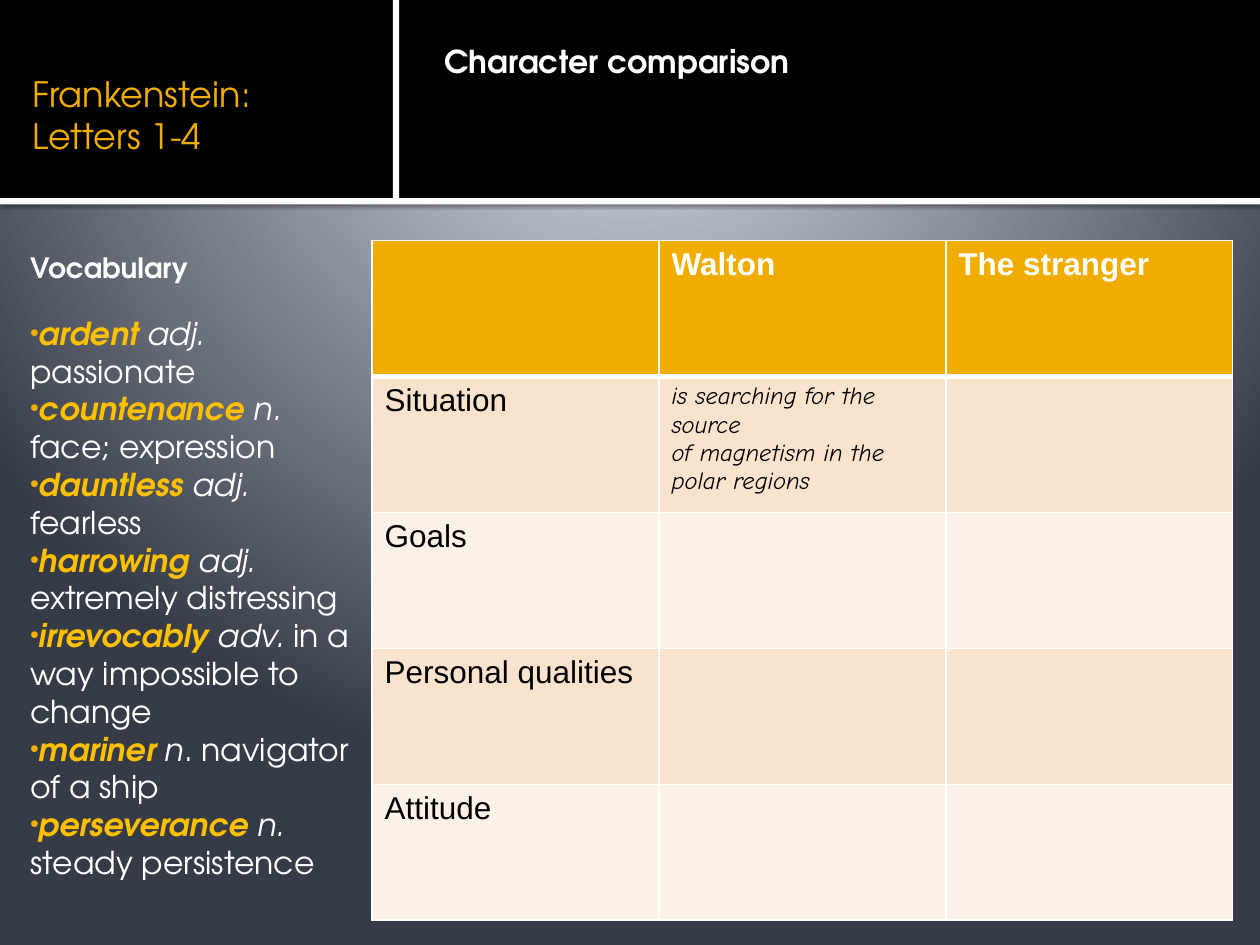
from dataclasses import dataclass

from lxml.etree import SubElement
from pptx import Presentation
from pptx.dml.color import RGBColor as RGB
from pptx.enum.shapes import MSO_SHAPE as Shape
from pptx.enum.text import MSO_ANCHOR as Anchor
from pptx.oxml import parse_xml
from pptx.oxml.ns import nsdecls, qn
from pptx.util import Cm, Pt


@dataclass(frozen=True)
class Theme:
    heading_font: str = "TeX Gyre Adventor"
    table_font: str = "Arial"
    note_font: str = "Comic Neue"
    black: str = "000000"
    white: str = "FFFFFF"
    amber: str = "F0AD00"
    term: str = "FFC000"
    bands: tuple = ("F9E3CC", "FCF1E7")
    backdrop: tuple = ((0, "C1C5D3"), (12, "C1C5D3"), (20, "BFC4D2"), (100, "353B47"))
    title_size: int = 20
    text_size: int = 18
    label_size: int = 16
    note_size: int = 14


VOCABULARY = (
    ("ardent ", "adj. ", "passionate"),
    ("countenance ", "n. ", "face; expression"),
    ("dauntless ", "adj. ", "fearless"),
    ("harrowing ", "adj. ", "extremely distressing"),
    ("irrevocably ", "adv. ", "in a way impossible to change"),
    ("mariner ", "n", ". navigator of a ship"),
    ("perseverance ", "n. ", "steady persistence"),
)
COMPARISON = (
    ("", "Walton", "The stranger"),
    ("Situation", "is searching for the source\nof magnetism in the polar regions", ""),
    ("Goals", "", ""),
    ("Personal qualities", "", ""),
    ("Attitude", "", ""),
)


class SlideBuilder:
    """Draws styled elements on one slide."""

    def __init__(self, slide, theme):
        self.slide = slide
        self.theme = theme

    def background(self):
        self.slide.background.fill.gradient()
        gradient = self.slide.element.find(".//" + qn("a:gradFill"))
        for child in list(gradient):
            gradient.remove(child)
        stops = SubElement(gradient, qn("a:gsLst"))
        for position, color in self.theme.backdrop:
            stop = SubElement(stops, qn("a:gs"), pos=str(position * 1000))
            SubElement(stop, qn("a:srgbClr"), val=color)
        path = SubElement(gradient, qn("a:path"), path="circle")
        SubElement(path, qn("a:fillToRect"), l="10000", t="-25000", r="10000", b="125000")

    def bar(self, left, top, width, height, color, shadow=False):
        shape = self.slide.shapes.add_shape(
            Shape.RECTANGLE, Cm(left), Cm(top), Cm(width), Cm(height))
        shape.fill.solid()
        shape.fill.fore_color.rgb = RGB.from_string(color)
        shape.line.fill.background()
        shape.shadow.inherit = False
        if shadow:
            effects = shape.element.spPr.find(qn("a:effectLst"))
            effects.append(parse_xml(
                f'<a:outerShdw {nsdecls("a")} blurRad="{Pt(2.5)}" dist="{Pt(0.8)}" dir="5400000">'
                f'<a:srgbClr val="{self.theme.black}"><a:alpha val="60000"/></a:srgbClr>'
                '</a:outerShdw>'))

    def font(self, font, name, size, color, bold=False, italic=False):
        font.name, font.size = name, Pt(size)
        font.bold, font.italic = bold, italic
        font.color.rgb = RGB.from_string(color)

    def text_box(self, left, top, width, height, text, size, color, bold=False,
                 margins=(0.25, 0.13, 0.25, 0.13), anchor=Anchor.TOP):
        box = self.slide.shapes.add_textbox(Cm(left), Cm(top), Cm(width), Cm(height))
        frame = box.text_frame
        frame.word_wrap = True
        frame.vertical_anchor = anchor
        (frame.margin_left, frame.margin_top,
         frame.margin_right, frame.margin_bottom) = map(Cm, margins)
        paragraph = frame.paragraphs[0]
        paragraph.text = text
        self.font(paragraph.font, self.theme.heading_font, size, color, bold)
        return frame

    def vocabulary_entry(self, frame, term, word_class, meaning):
        theme = self.theme
        paragraph = frame.add_paragraph()
        properties = paragraph._p.get_or_add_pPr()
        properties.set("marL", "0")
        properties.set("indent", "0")
        bullet_color = SubElement(properties, qn("a:buClr"))
        SubElement(bullet_color, qn("a:srgbClr"), val=theme.amber)
        SubElement(properties, qn("a:buSzPct"), val="80000")
        SubElement(properties, qn("a:buFont"), typeface=theme.table_font)
        SubElement(properties, qn("a:buChar"), char="•")
        for text, color, bold, italic in ((term, theme.term, True, True),
                                          (word_class, theme.white, False, True),
                                          (meaning, theme.white, False, False)):
            run = paragraph.add_run()
            run.text = text
            self.font(run.font, theme.heading_font, theme.text_size, color, bold, italic)

    def borders(self, cell, top, bottom):
        properties = cell._tc.get_or_add_tcPr()
        for side, width in (("L", 1), ("R", 1), ("T", top), ("B", bottom)):
            line = SubElement(properties, qn(f"a:ln{side}"), w=str(Pt(width)))
            fill = SubElement(line, qn("a:solidFill"))
            SubElement(fill, qn("a:srgbClr"), val=self.theme.white)

    def cell(self, cell, text, row, column):
        theme = self.theme
        header = row == 0
        note = row > 0 and column > 0
        self.borders(cell, 3 if row == 1 else 1, 3 if header else 1)
        cell.fill.solid()
        cell.fill.fore_color.rgb = RGB.from_string(
            theme.amber if header else theme.bands[(row - 1) % 2])
        cell.text = text
        for paragraph in cell.text_frame.paragraphs:
            self.font(paragraph.font,
                      theme.note_font if note else theme.table_font,
                      theme.note_size if note else theme.text_size,
                      theme.white if header else theme.black, header, note)

    def table(self, left, top, width, height, rows):
        table = self.slide.shapes.add_table(
            len(rows), len(rows[0]), Cm(left), Cm(top), Cm(width), Cm(height)).table
        for row, texts in enumerate(rows):
            for column, text in enumerate(texts):
                self.cell(table.cell(row, column), text, row, column)


def main():
    theme = Theme()
    presentation = Presentation()
    presentation.slide_width, presentation.slide_height = Cm(25.4), Cm(19.05)
    slide = presentation.slides.add_slide(presentation.slide_layouts[6])
    builder = SlideBuilder(slide, theme)

    builder.background()
    builder.bar(0, 3.99, 25.4, 0.13, theme.white, shadow=True)
    builder.bar(0, 0, 25.4, 3.99, theme.black)
    builder.bar(7.92, 0, 0.13, 4.04, theme.white)
    builder.text_box(0.46, 0.43, 7.01, 2.72, "Frankenstein: Letters 1-4", theme.title_size,
                     theme.amber, margins=(0.2, 0.13, 0.13, 0), anchor=Anchor.BOTTOM)
    builder.table(7.5, 4.85, 17.35, 13.7, COMPARISON)

    vocabulary = builder.text_box(0.46, 4.8, 6.86, 12.7, "Vocabulary", theme.label_size,
                                  theme.white, bold=True, margins=(0.15, 0.25, 0.25, 0.13))
    vocabulary.paragraphs[0].space_after = Pt(17)
    for entry in VOCABULARY:
        builder.vocabulary_entry(vocabulary, *entry)

    builder.text_box(8.71, 0.71, 15.39, 1.02, "Character comparison", theme.text_size,
                     theme.white, bold=True)
    presentation.save("out.pptx")


if __name__ == "__main__":
    main()
